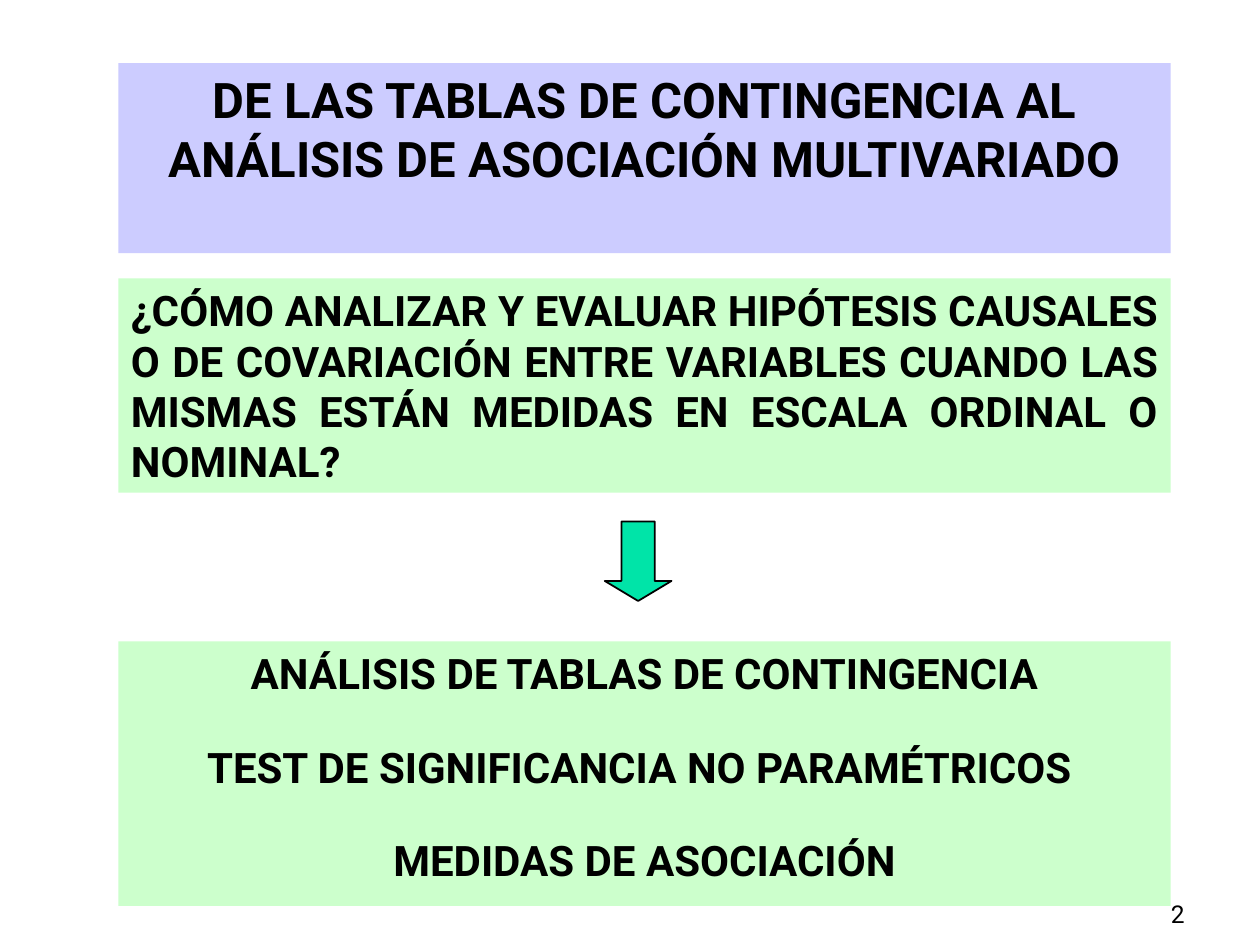
import pptx
import pptx.util
import pptx.dml.color
import pptx.enum.shapes
import pptx.enum.text
from dataclasses import dataclass

Inches = pptx.util.Inches
Pt = pptx.util.Pt
Align = pptx.enum.text.PP_ALIGN
Anchor = pptx.enum.text.MSO_ANCHOR
Kind = pptx.enum.shapes.MSO_SHAPE


def tint(code):
    return pptx.dml.color.RGBColor.from_string(code)


@dataclass(frozen=True)
class Theme:
    font: str = "Roboto"
    ink: str = "000000"
    lilac: str = "CCCCFF"
    mint: str = "CCFFCC"
    jade: str = "00E4A8"
    head: int = 28
    body: int = 24
    small: int = 14
    gap: float = 24.7


class Deck:
    left = 0.94
    width = 8.35

    def __init__(self, theme):
        self.theme = theme
        self.file = pptx.Presentation()
        self.file.slide_width = Inches(10)
        self.file.slide_height = Inches(7.5)
        self.slide = self.file.slides.add_slide(self.file.slide_layouts[5])

    def apply(self, item, values):
        for name, value in values.items():
            setattr(item, name, value)

    def paint(self, shape, code):
        shape.fill.solid()
        shape.fill.fore_color.rgb = tint(code)

    def label(self, shape, lines, size, align, bold=True, anchor=Anchor.TOP):
        frame = shape.text_frame
        self.apply(frame, {
            "word_wrap": True,
            "auto_size": pptx.enum.text.MSO_AUTO_SIZE.NONE,
            "vertical_anchor": anchor,
            "margin_left": Inches(0.1),
            "margin_right": Inches(0.1),
            "margin_top": Inches(0.05),
            "margin_bottom": Inches(0.05),
        })
        frame.text = "\n".join(lines)
        for index, para in enumerate(frame.paragraphs):
            self.apply(para, {
                "alignment": align,
                "line_spacing": 1.0,
                "space_before": Pt(self.theme.gap if index else 0),
            })
            for run in para.runs:
                self.apply(run.font, {
                    "name": self.theme.font, "size": Pt(size), "bold": bold,
                })
                run.font.color.rgb = tint(self.theme.ink)

    def title(self, text, top, height):
        shape = self.slide.shapes.title
        self.apply(shape, {
            "left": Inches(self.left), "top": Inches(top),
            "width": Inches(self.width), "height": Inches(height),
        })
        self.paint(shape, self.theme.lilac)
        self.label(shape, [text], self.theme.head, Align.CENTER)

    def panel(self, lines, top, height, align):
        shape = self.slide.shapes.add_shape(
            Kind.RECTANGLE, Inches(self.left), Inches(top),
            Inches(self.width), Inches(height))
        shape.shadow.inherit = False
        shape.line.fill.background()
        self.paint(shape, self.theme.mint)
        self.label(shape, lines, self.theme.body, align)

    def arrow(self, left, top, width, height):
        shape = self.slide.shapes.add_shape(
            Kind.DOWN_ARROW, Inches(left), Inches(top),
            Inches(width), Inches(height))
        shape.shadow.inherit = False
        shape.adjustments[0] = 0.5
        shape.adjustments[1] = 0.3
        self.paint(shape, self.theme.jade)
        shape.line.color.rgb = tint(self.theme.ink)
        shape.line.width = Pt(1)

    def number(self, text):
        shape = self.slide.shapes.add_textbox(
            Inches(7.42), Inches(6.92), Inches(2.08), Inches(0.5))
        self.label(shape, [text], self.theme.small, Align.RIGHT,
                   bold=False, anchor=Anchor.BOTTOM)


def main():
    deck = Deck(Theme())
    deck.title("DE LAS TABLAS DE CONTINGENCIA AL ANÁLISIS DE ASOCIACIÓN "
               "MULTIVARIADO", 0.5, 1.51)
    deck.number("2")
    deck.panel(["¿CÓMO ANALIZAR Y EVALUAR HIPÓTESIS CAUSALES O DE "
                "COVARIACIÓN ENTRE VARIABLES CUANDO LAS MISMAS ESTÁN "
                "MEDIDAS EN ESCALA ORDINAL O NOMINAL? "],
               2.21, 1.7, Align.JUSTIFY)
    deck.arrow(4.8, 4.14, 0.53, 0.63)
    deck.panel(["ANÁLISIS DE TABLAS DE CONTINGENCIA",
                "TEST DE SIGNIFICANCIA NO PARAMÉTRICOS ",
                "MEDIDAS DE ASOCIACIÓN"], 5.09, 2.1, Align.CENTER)
    deck.file.save("out.pptx")


if __name__ == "__main__":
    main()
